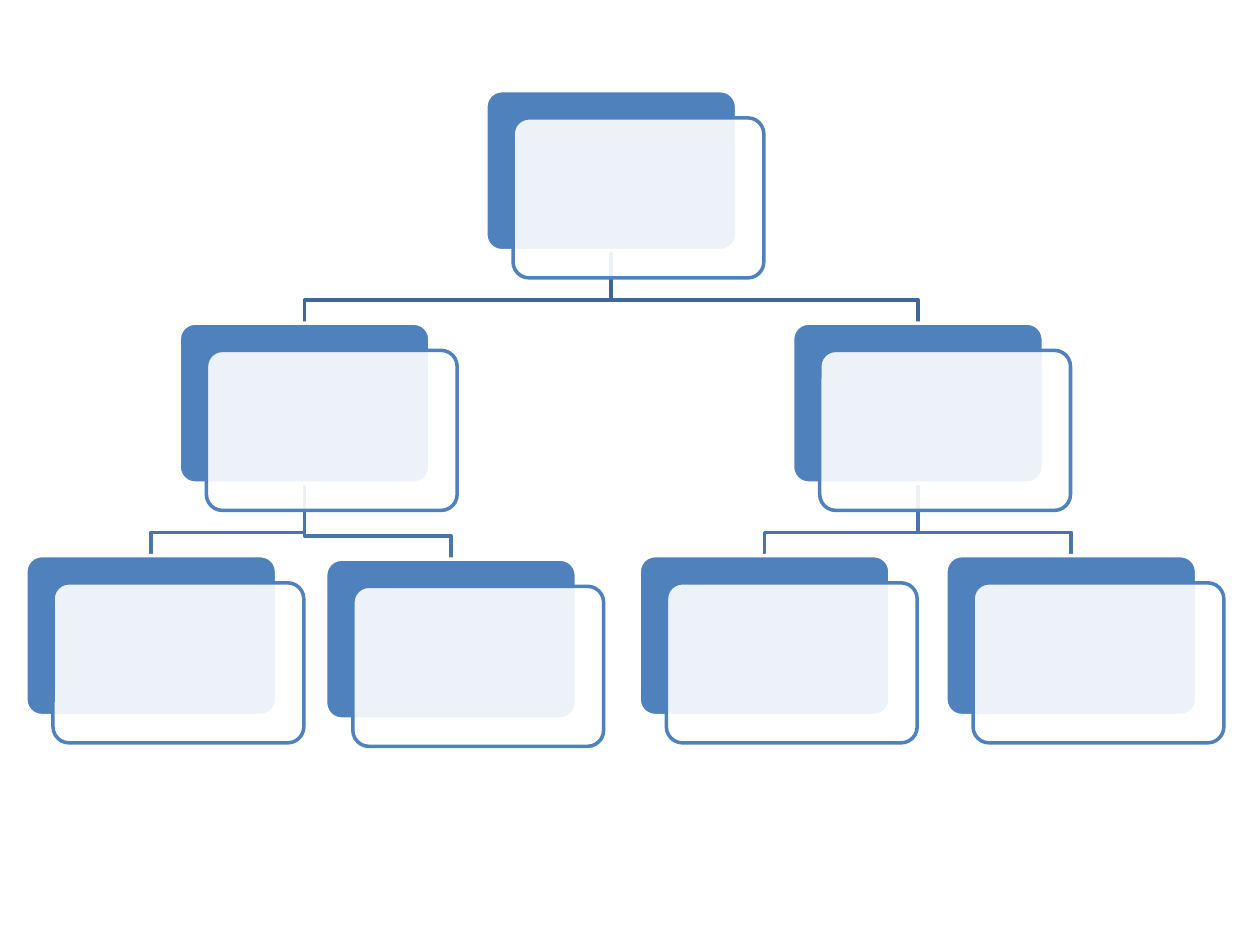
from lxml.etree import SubElement
from pptx import Presentation
from pptx.dml.color import RGBColor
from pptx.enum.shapes import MSO_SHAPE
from pptx.oxml.ns import qn
from pptx.util import Inches, Pt

HUES = {"blue": "4F81BD", "white": "FFFFFF", "upper": "3F6797", "lower": "4875AC"}

# Grid: first card centre and top, then column and row steps, in inches
LEFT, TOP = 1.2, 0.72
COL, ROW = 1.217, 1.845
WIDE, HIGH = 1.99, 1.27
SHIFT = 0.216   # offset of the front card
DROP = 0.185    # elbow height above the lower card

# Cards as (column, row); the second leaf sits slightly off the grid
CARDS = {
    "root": (3, 0),
    "left": (1, 1),
    "leaf1": (0, 2),
    "leaf2": (1.955, 2.015),
    "right": (5, 1),
    "leaf3": (4, 2),
    "leaf4": (6, 2),
}
LINKS = [
    ("right", "leaf4", "lower"),
    ("right", "leaf3", "lower"),
    ("root", "right", "upper"),
    ("left", "leaf2", "lower"),
    ("left", "leaf1", "lower"),
    ("root", "left", "upper"),
]


def hue(name):
    return RGBColor.from_string(HUES[name])


def place(name):
    """Centre x and top y of a card, in inches."""
    col, row = CARDS[name]
    return LEFT + col * COL, TOP + row * ROW


def draw_link(group, start, end, tint):
    """Elbow line from the bottom of one card to the top of another."""
    x1, y1 = place(start)
    x2, y2 = place(end)
    y1 += HIGH
    bend = y2 - DROP
    path = group.shapes.build_freeform(Inches(x1), Inches(y1))
    points = [(x1, bend), (x2, bend), (x2, y2)]
    path.add_line_segments([(Inches(x), Inches(y)) for x, y in points], close=False)
    link = path.convert_to_shape()
    link.shadow.inherit = False
    link.fill.background()
    link.line.color.rgb = hue(tint)
    link.line.width = Pt(2)


def draw_plate(group, x, y, fill, edge):
    plate = group.shapes.add_shape(
        MSO_SHAPE.ROUNDED_RECTANGLE, Inches(x), Inches(y), Inches(WIDE), Inches(HIGH))
    plate.adjustments[0] = 0.1
    plate.shadow.inherit = False
    plate.fill.solid()
    plate.fill.fore_color.rgb = hue(fill)
    plate.line.color.rgb = hue(edge)
    plate.line.width = Pt(2)
    return plate


def draw_card(group, name):
    """Solid back plate with a see-through front plate."""
    mid, y = place(name)
    x = mid - WIDE / 2
    draw_plate(group, x, y, "blue", "white")
    front = draw_plate(group, x + SHIFT, y + SHIFT, "white", "blue")
    shade = front.element.spPr.find(qn("a:solidFill")).find(qn("a:srgbClr"))
    SubElement(shade, qn("a:alpha")).set("val", "90000")


def draw_tree(slide):
    group = slide.shapes.add_group_shape()
    # Links lie behind the cards
    for start, end, tint in LINKS:
        draw_link(group, start, end, tint)
    for name in CARDS:
        draw_card(group, name)


def main():
    deck = Presentation()
    deck.slide_width, deck.slide_height = Inches(10), Inches(7.5)
    slide = deck.slides.add_slide(deck.slide_layouts[6])
    draw_tree(slide)
    deck.save("out.pptx")


if __name__ == "__main__":
    main()
